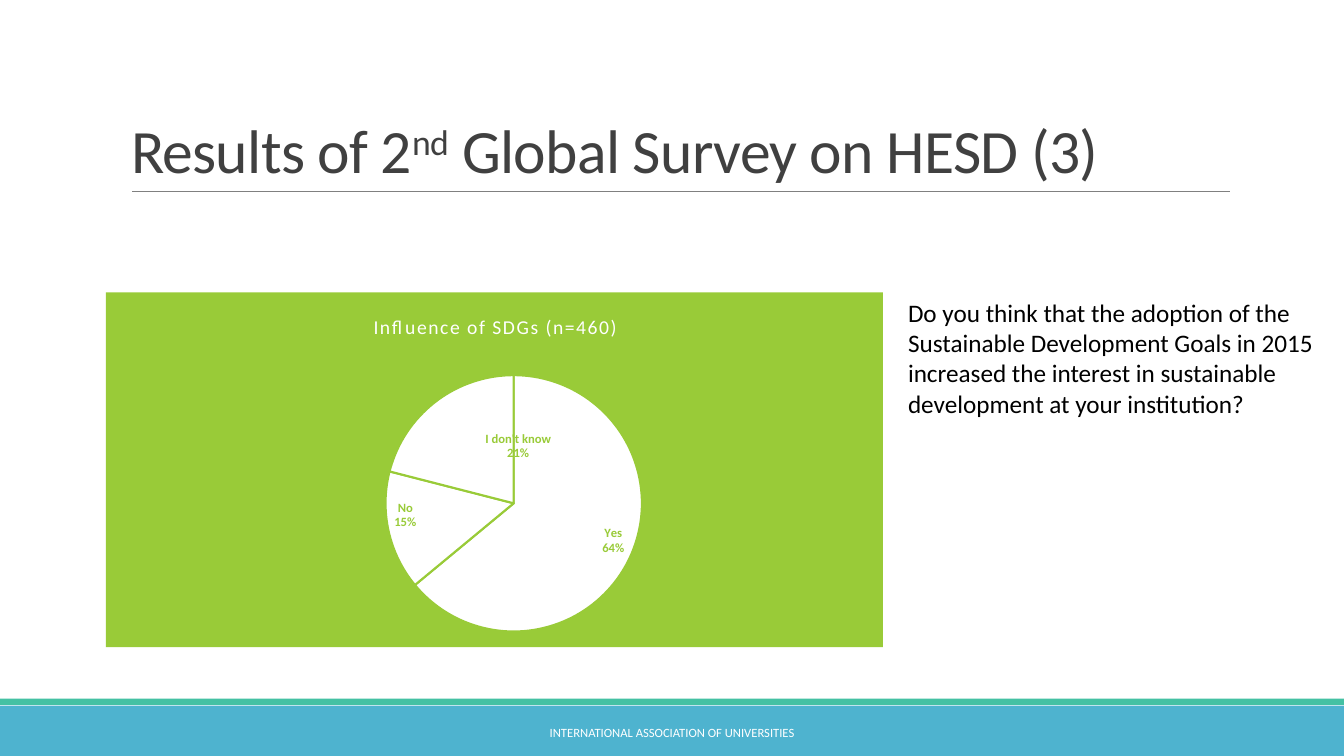
import copy

import lxml.etree
import pptx
import pptx.chart.data
import pptx.dml.color
import pptx.enum.chart
import pptx.enum.shapes
import pptx.enum.text
import pptx.oxml
import pptx.oxml.ns
import pptx.util

Pt = pptx.util.Pt
RGBColor = pptx.dml.color.RGBColor
qn = pptx.oxml.ns.qn
ALIGN = pptx.enum.text.PP_ALIGN
ANCHOR = pptx.enum.text.MSO_ANCHOR

FONT = "Calibri"
WHITE = RGBColor(0xFF, 0xFF, 0xFF)
BLACK = RGBColor(0x00, 0x00, 0x00)
DARK_GRAY = RGBColor(0x40, 0x40, 0x40)
RULE_GRAY = RGBColor(0x80, 0x80, 0x80)
GREEN = RGBColor(0x99, 0xCB, 0x38)
BLUE = RGBColor(0x4E, 0xB3, 0xCF)
TEAL = RGBColor(0x44, 0xC1, 0xA3)


def format_font(font, size, color, bold=False):
    font.name = FONT
    font.size = Pt(size)
    font.bold = bold
    font.color.rgb = color


def add_text(paragraph, text, size, color, align=ALIGN.LEFT, spacing=0, baseline=0):
    paragraph.alignment = align
    run = paragraph.add_run()
    run.text = text
    format_font(run.font, size, color)
    properties = run._r.get_or_add_rPr()
    if spacing:
        properties.set("spc", str(spacing))
    if baseline:
        properties.set("baseline", str(baseline))


def add_text_box(slide, left, top, width, height, anchor=ANCHOR.TOP):
    box = slide.shapes.add_textbox(Pt(left), Pt(top), Pt(width), Pt(height))
    box.text_frame.word_wrap = True
    box.text_frame.vertical_anchor = anchor
    return box.text_frame


def add_band(slide, left, top, width, height, color):
    band = slide.shapes.add_shape(
        pptx.enum.shapes.MSO_SHAPE.RECTANGLE, Pt(left), Pt(top), Pt(width), Pt(height))
    band.shadow.inherit = False
    band.fill.solid()
    band.fill.fore_color.rgb = color
    band.line.fill.background()


def add_footer(slide, left, top, width, height):
    add_band(slide, left, top, width, height, BLUE)
    add_band(slide, left, top - 5, width, 4.6, TEAL)
    text_width = 380
    frame = add_text_box(
        slide, left + (width - text_width) / 2, top + 5, text_width, 28, ANCHOR.MIDDLE)
    add_text(frame.paragraphs[0], "INTERNATIONAL ASSOCIATION OF UNIVERSITIES",
             9, WHITE, align=ALIGN.CENTER)


def add_heading(slide, left, top, width, height):
    title = slide.shapes.title
    title.left, title.top, title.width, title.height = map(Pt, (left, top, width, height))
    frame = title.text_frame
    frame.word_wrap = True
    frame.auto_size = pptx.enum.text.MSO_AUTO_SIZE.NONE
    frame.vertical_anchor = ANCHOR.BOTTOM
    paragraph = frame.paragraphs[0]
    paragraph.line_spacing = 0.85
    for text, baseline in (("Results of 2", 0), ("nd", 30000),
                           (" Global Survey on HESD (3)", 0)):
        add_text(paragraph, text, 44, DARK_GRAY, spacing=-50, baseline=baseline)
    bottom = Pt(top + height)
    rule = slide.shapes.add_connector(
        pptx.enum.shapes.MSO_CONNECTOR.STRAIGHT,
        Pt(left + 8), bottom, Pt(left + width), bottom)
    rule.line.color.rgb = RULE_GRAY
    rule.line.width = Pt(0.5)
    lxml.etree.SubElement(rule._element.spPr, qn("a:effectLst"))


def make_layout(**settings):
    layout = pptx.oxml.parse_xml(
        f'<c:layout {pptx.oxml.ns.nsdecls("c")}><c:manualLayout/></c:layout>')
    for name, value in settings.items():
        lxml.etree.SubElement(layout[0], qn(f"c:{name}")).set("val", str(value))
    return layout


def set_layout(element, layout, position):
    for existing in element.findall(qn("c:layout")):
        element.remove(existing)
    element.insert(position, layout)


def format_labels(labels):
    labels.show_value = False
    labels.show_category_name = True
    labels.show_percentage = True
    labels.number_format = "0%"
    labels.number_format_is_linked = False
    labels.position = pptx.enum.chart.XL_LABEL_POSITION.INSIDE_END
    format_font(labels.font, 9, GREEN, bold=True)
    element = labels._element
    separator = lxml.etree.Element(qn("c:separator"))
    separator.text = "\n"
    flags = [child for child in element if child.tag.startswith(qn("c:show"))
             and child.tag != qn("c:showLeaderLines")]
    flags[-1].addnext(separator)

    shifted = lxml.etree.Element(qn("c:dLbl"))
    lxml.etree.SubElement(shifted, qn("c:idx")).set("val", "2")
    shifted.append(make_layout(x=0.06, y=0.07))
    for child in element:
        if child.tag != qn("c:showLeaderLines"):
            shifted.append(copy.deepcopy(child))
    element.insert(0, shifted)


def add_influence_chart(slide, left, top, width, height):
    data = pptx.chart.data.CategoryChartData()
    data.categories = ["Yes", "No", "I don't know"]
    data.add_series("Series 1", [64, 15, 21])
    chart = slide.shapes.add_chart(
        pptx.enum.chart.XL_CHART_TYPE.PIE,
        Pt(left), Pt(top), Pt(width), Pt(height), data).chart
    format_font(chart.font, 10, BLACK)
    chart.has_legend = False

    chart.has_title = True
    add_text(chart.chart_title.text_frame.paragraphs[0], "Influence of SDGs (n=460)",
             14, WHITE, align=ALIGN.CENTER, spacing=100)
    chart.chart_title.include_in_layout = False
    set_layout(chart.chart_title._element,
               make_layout(xMode="edge", yMode="edge", x=0.34, y=0.05), 1)

    plot = chart.plots[0]
    plot.vary_by_categories = False
    for index in range(3):
        point = plot.series[0].points[index].format
        point.fill.solid()
        point.fill.fore_color.rgb = WHITE
        point.line.color.rgb = GREEN
        point.line.width = Pt(1.5)
    plot.has_data_labels = True
    format_labels(plot.series[0].data_labels)

    chart_space = chart._chartSpace
    plot_area = chart_space.chart.plotArea
    set_layout(plot_area, make_layout(layoutTarget="inner", xMode="edge", yMode="edge",
                                      x=0.36, y=0.23, w=0.33, h=0.73), 0)
    background = pptx.oxml.parse_xml(
        f'<c:spPr {pptx.oxml.ns.nsdecls("c", "a")}><a:solidFill>'
        f'<a:srgbClr val="{GREEN}"/></a:solidFill><a:ln><a:noFill/></a:ln></c:spPr>')
    chart_space.chart.addnext(background)


def add_question(slide, left, top, width, height):
    frame = add_text_box(slide, left, top, width, height)
    frame.auto_size = pptx.enum.text.MSO_AUTO_SIZE.SHAPE_TO_FIT_TEXT
    add_text(frame.paragraphs[0],
             "Do you think that the adoption of the Sustainable Development Goals in 2015 "
             "increased the interest in sustainable development at your institution?",
             18, BLACK)


def main():
    presentation = pptx.Presentation()
    presentation.slide_width = Pt(960)
    presentation.slide_height = Pt(540)
    slide = presentation.slides.add_slide(presentation.slide_layouts[5])
    add_footer(slide, 0, 504, 960, 36)
    add_heading(slide, 86.4, 22.3, 792, 114.5)
    add_influence_chart(slide, 75.6, 208.8, 555, 253.4)
    add_question(slide, 641.5, 208.8, 303.8, 138.2)
    presentation.save("out.pptx")


if __name__ == "__main__":
    main()
